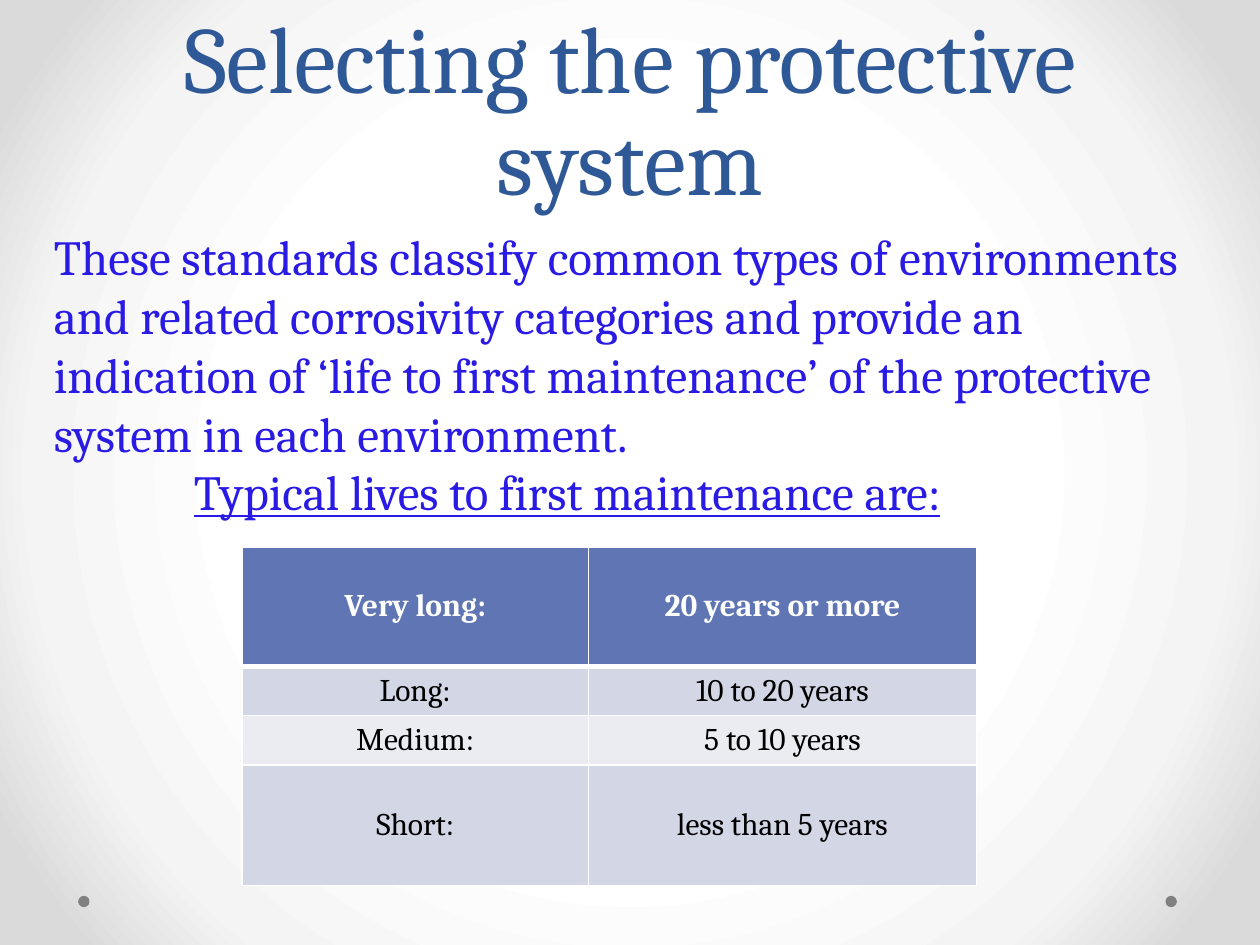
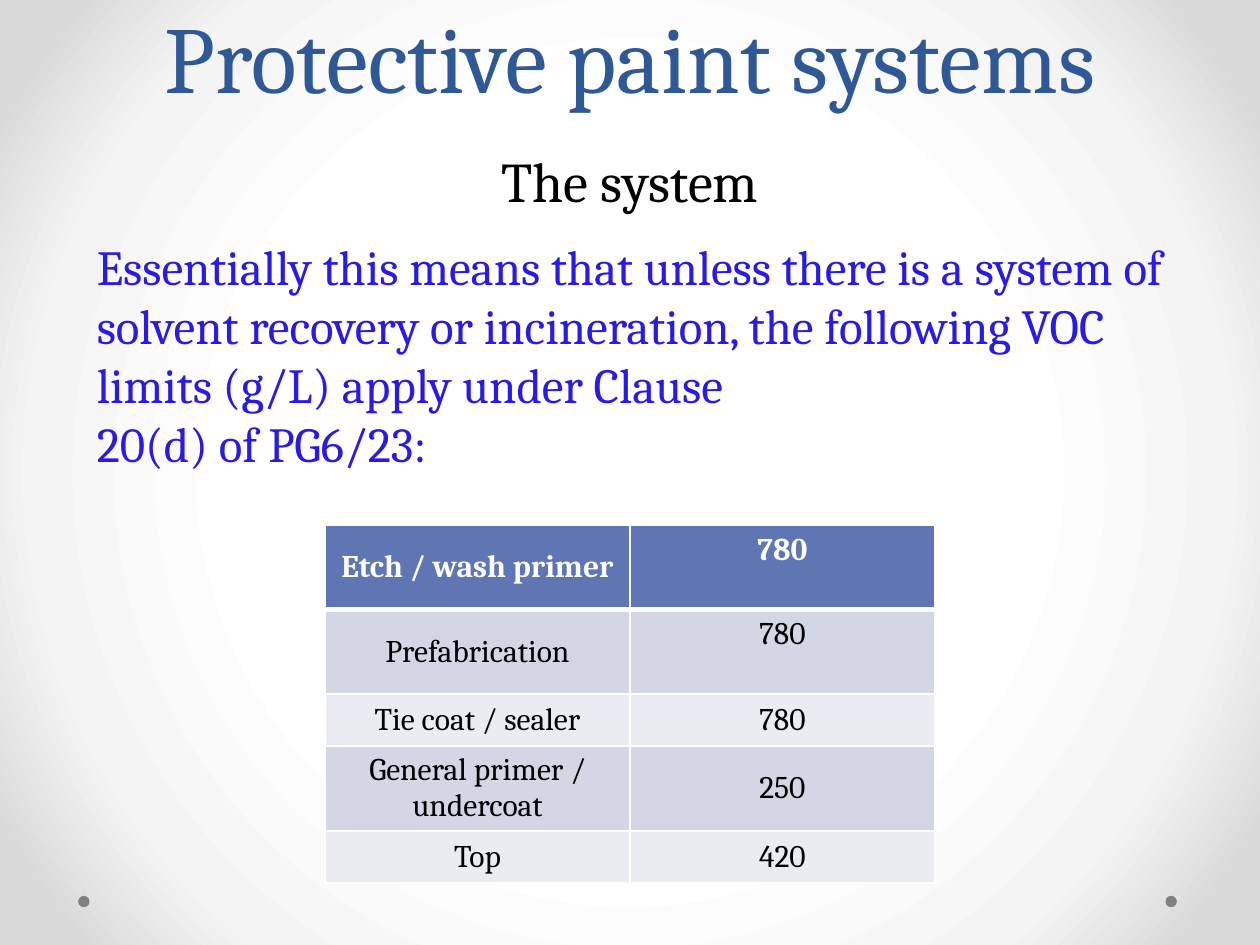
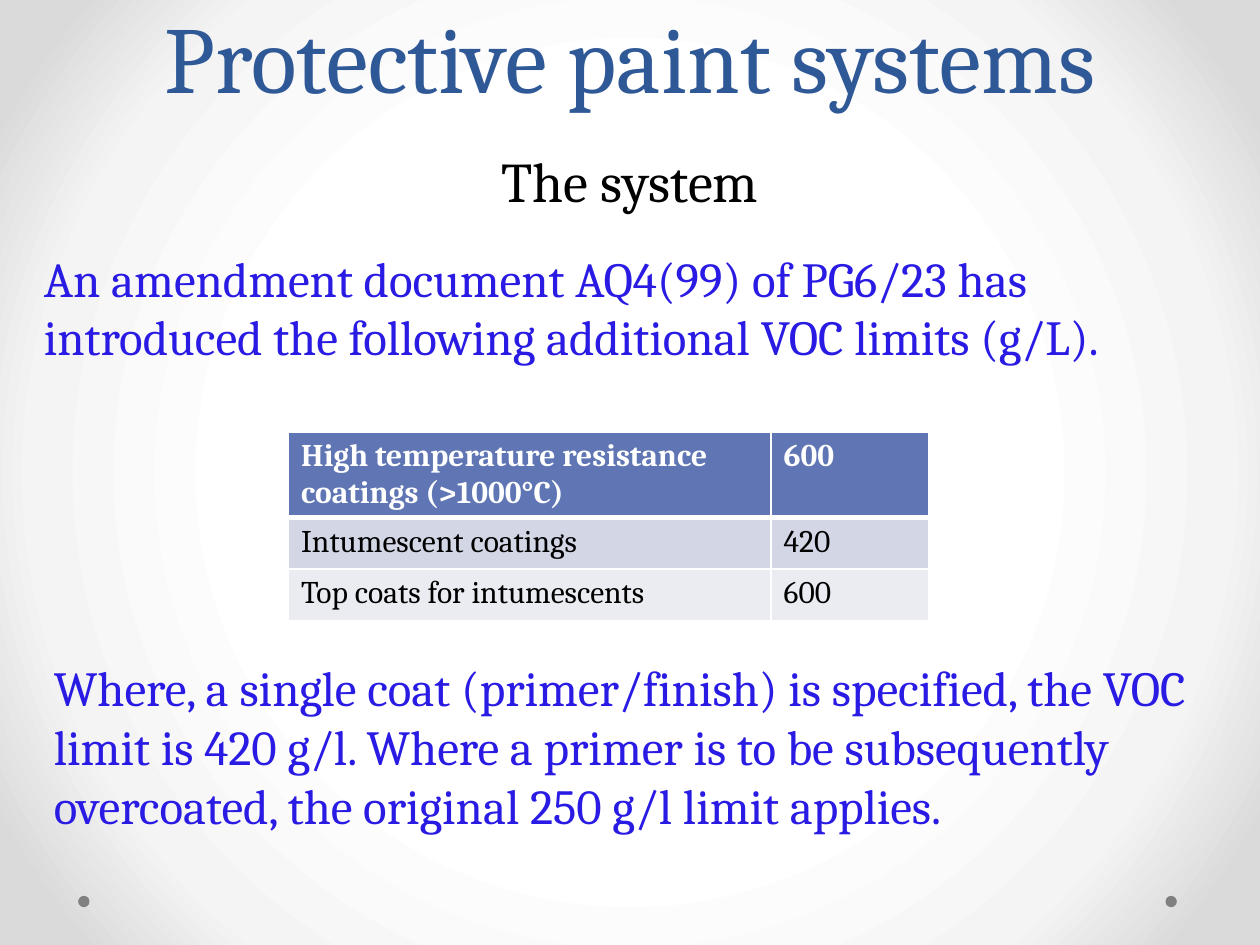
from pptx import Presentation
from pptx.dml.color import RGBColor
from pptx.enum.shapes import MSO_SHAPE
from pptx.enum.text import MSO_ANCHOR, MSO_AUTO_SIZE, PP_ALIGN
from pptx.oxml import parse_xml
from pptx.oxml.ns import nsdecls, qn
from pptx.util import Inches, Pt

ELLIPSE = MSO_SHAPE.OVAL
TOP, MIDDLE, BOTTOM = MSO_ANCHOR.TOP, MSO_ANCHOR.MIDDLE, MSO_ANCHOR.BOTTOM
LEFT, CENTER = PP_ALIGN.LEFT, PP_ALIGN.CENTER
NO_FIT, GROW = MSO_AUTO_SIZE.NONE, MSO_AUTO_SIZE.SHAPE_TO_FIT_TEXT

FONT = "Cambria"
TITLE_BLUE, BODY_BLUE = "2F5897", "291BE3"
BLACK, WHITE, DOT_GRAY = "000000", "FFFFFF", "808080"
HEADER_FILL = "6076B4"
BAND_FILLS = ("EAECF2", "D2D6E5")
BACKGROUND_STOPS = ((50, "FFFFFF"), (76, "F4F4F4"), (92, "DADADA"))
TITLE_ONLY = 5


def color(value):
    return RGBColor.from_string(value)


def add_text(para, text, size=28, fill=BODY_BLUE, bold=False, underline=False):
    span = para.add_run()
    span.text = text
    font = span.font
    font.name, font.size = FONT, Pt(size)
    font.bold, font.underline = bold, underline
    font.color.rgb = color(fill)


def style_background(master):
    master.background.fill.solid()
    solid = master.element.find(f".//{qn('p:bgPr')}")[0]
    stops = "".join(
        f'<a:gs pos="{position * 1000}"><a:srgbClr val="{value}"/></a:gs>'
        for position, value in BACKGROUND_STOPS
    )
    gradient = parse_xml(
        f'<a:gradFill {nsdecls("a")} rotWithShape="1"><a:gsLst>{stops}</a:gsLst>'
        '<a:path path="circle"><a:fillToRect l="50000" t="50000" r="50000" b="50000"/>'
        "</a:path></a:gradFill>"
    )
    solid.getparent().replace(solid, gradient)


def add_master_dots(master, page):
    for left in (0.62, 9.25):
        dot = page.shapes.add_shape(
            ELLIPSE, Inches(left), Inches(7.11), Inches(0.09), Inches(0.09)
        )
        dot.shadow.inherit = False
        dot.fill.solid()
        dot.fill.fore_color.rgb = color(DOT_GRAY)
        dot.line.fill.background()
        master.element.cSld.spTree.append(dot.element)


def add_page(deck, title, subtitle=None):
    page = deck.slides.add_slide(deck.slide_layouts[TITLE_ONLY])
    box = page.shapes.title
    box.left, box.top = Inches(0.5), Inches(0)
    box.width, box.height = Inches(9), Inches(1.75)
    frame = box.text_frame
    frame.auto_size, frame.word_wrap = NO_FIT, True
    frame.vertical_anchor = BOTTOM
    para = frame.paragraphs[0]
    para.alignment, para.line_spacing = CENTER, Pt(58)
    add_text(para, title, size=54, fill=TITLE_BLUE)
    if subtitle:
        para.add_line_break()
        add_text(para, subtitle, size=32, fill=BLACK)
    return page


def add_body(page, box, *texts):
    frame = page.shapes.add_textbox(*map(Inches, box)).text_frame
    frame.word_wrap, frame.auto_size = True, GROW
    for index, text in enumerate(texts):
        para = frame.add_paragraph() if index else frame.paragraphs[0]
        add_text(para, text)
    return frame


def add_border(cell, side, width):
    properties = cell._tc.get_or_add_tcPr()
    properties.append(parse_xml(
        f'<a:{side} {nsdecls("a")} w="{Pt(width)}"><a:solidFill>'
        f'<a:srgbClr val="{WHITE}"/></a:solidFill></a:{side}>'
    ))


def format_cell(cell, text, row, align, anchor):
    header = row == 0
    for side in ("lnL", "lnR", "lnT", "lnB"):
        under_header = (row, side) in ((0, "lnB"), (1, "lnT"))
        add_border(cell, side, 3 if under_header else 1)
    cell.fill.solid()
    cell.fill.fore_color.rgb = color(HEADER_FILL if header else BAND_FILLS[row % 2])
    cell.vertical_anchor = anchor
    para = cell.text_frame.paragraphs[0]
    para.alignment = align
    add_text(para, text, size=18, fill=WHITE if header else BLACK, bold=header)


def add_limits_table(page, left, top, widths, heights, rows,
                     align=CENTER, anchor=MIDDLE, raised=()):
    table = page.shapes.add_table(
        len(rows), len(widths), Inches(left), Inches(top),
        Inches(sum(widths)), Inches(sum(heights)),
    ).table
    for column, width in zip(table.columns, widths):
        column.width = Inches(width)
    for row, (height, texts) in enumerate(zip(heights, rows)):
        table.rows[row].height = Inches(height)
        for column, text in enumerate(texts):
            cell_anchor = TOP if (row, column) in raised else anchor
            format_cell(table.cell(row, column), text, row, align, cell_anchor)


def build_lifetimes(deck):
    page = add_page(deck, "Selecting the protective system")
    add_limits_table(page, 1.92, 4.34, (2.75, 3.08), (0.95, 0.39, 0.39, 0.96), (
        ("Very long:", "20 years or more"),
        ("Long:", "10 to 20 years"),
        ("Medium:", "5 to 10 years"),
        ("Short:", "less than 5 years"),
    ))
    frame = add_body(
        page, (0.33, 1.75, 9.5, 2.46),
        "These standards classify common types of environments and related corrosivity "
        "categories and provide an indication of ‘life to first maintenance’ of the "
        "protective system in each environment.",
    )
    para = frame.add_paragraph()
    para._p.get_or_add_pPr().set("marL", str(Inches(1.11)))
    add_text(para, "Typical lives to first maintenance are:", underline=True)
    return page


def build_solvent_limits(deck):
    page = add_page(deck, "Protective paint systems", "The system")
    add_limits_table(page, 2.58, 4.17, (2.42, 2.42), (0.67, 0.67, 0.41, 0.67, 0.41), (
        ("Etch / wash primer", "780"),
        ("Prefabrication", "780"),
        ("Tie coat / sealer", "780"),
        ("General primer / undercoat", "250"),
        ("Top", "420"),
    ), raised=((0, 1), (1, 1)))
    add_body(
        page, (0.67, 1.83, 8.83, 1.99),
        "Essentially this means that unless there is a system of solvent recovery or "
        "incineration, the following VOC limits (g/L) apply under Clause",
        "20(d) of PG6/23:",
    )


def build_added_limits(deck):
    page = add_page(deck, "Protective paint systems", "The system")
    add_limits_table(page, 2.29, 3.43, (3.83, 1.25), (0.67, 0.41, 0.41), (
        ("High temperature resistance coatings (>1000°C)", "600"),
        ("Intumescent coatings", "420"),
        ("Top coats for intumescents", "600"),
    ), align=LEFT, anchor=TOP)
    add_body(
        page, (0.25, 1.92, 9.5, 1.04),
        "An amendment document AQ4(99) of PG6/23 has introduced the following "
        "additional VOC limits (g/L).",
    )
    add_body(
        page, (0.33, 5.17, 9.42, 1.99),
        "Where, a single coat (primer/finish) is specified, the VOC limit is 420 g/l. "
        "Where a primer is to be subsequently overcoated, the original 250 g/l limit "
        "applies.",
    )


def main():
    deck = Presentation()
    deck.slide_width, deck.slide_height = Inches(10), Inches(7.5)
    style_background(deck.slide_master)
    first_page = build_lifetimes(deck)
    add_master_dots(deck.slide_master, first_page)
    build_solvent_limits(deck)
    build_added_limits(deck)
    deck.save("out.pptx")


if __name__ == "__main__":
    main()
